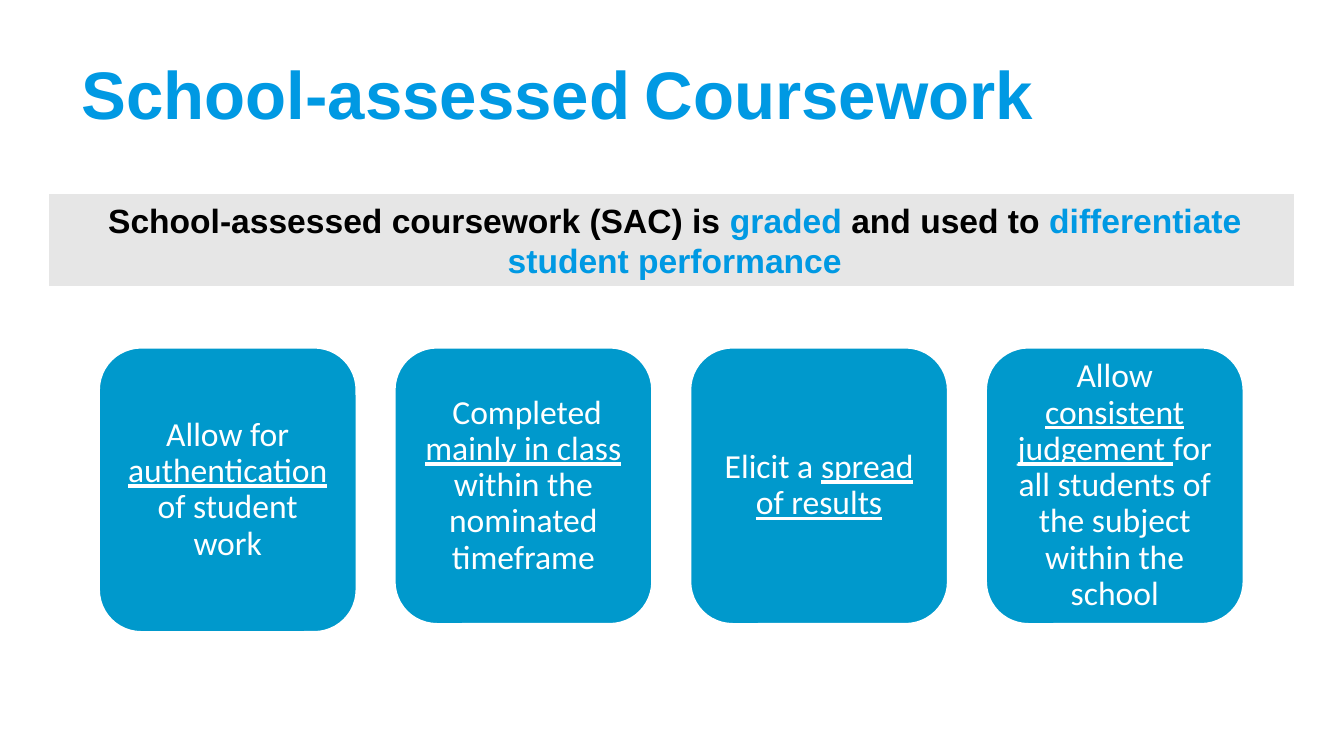
import pptx
import pptx.dml.color
import pptx.enum.shapes
import pptx.enum.text
import pptx.util
from pptx.util import Inches

COLORS = {
    "accent": "0099E3",
    "card": "0099CC",
    "banner": "E6E6E6",
    "white": "FFFFFF",
    "black": "000000",
}

# Each card: height and text runs with their own format
CARDS = [
    (2.13, [("Allow for ", {}), ("authentication", {"underline": True}),
            (" of student work", {})]),
    (2.07, [(" ", {"bold": True}), ("Completed ", {}),
            ("mainly in class ", {"underline": True}),
            ("within the nominated timeframe", {})]),
    (2.07, [("Elicit a ", {}), ("spread of results", {"underline": True})]),
    (2.07, [("Allow ", {}), ("consistent judgement ", {"underline": True}),
            ("for all students of the subject within the school", {})]),
]
CARD_LEFT, CARD_TOP, CARD_WIDTH, CARD_PITCH = 0.73, 2.58, 1.93, 2.2


def rgb(name):
    return pptx.dml.color.RGBColor.from_string(COLORS[name])


def write_text(shape, runs, font="Arial", size=18, color="black", bold=False,
               align="LEFT", line_spacing=1.0, margins=(0.1, 0.05, 0.1, 0.05)):
    """Fill a shape with one paragraph; a run may override the format."""
    frame = shape.text_frame
    frame.word_wrap = True
    frame.vertical_anchor = pptx.enum.text.MSO_ANCHOR.MIDDLE
    (frame.margin_left, frame.margin_top,
     frame.margin_right, frame.margin_bottom) = map(Inches, margins)
    paragraph = frame.paragraphs[0]
    paragraph.alignment = pptx.enum.text.PP_ALIGN[align]
    paragraph.line_spacing = line_spacing
    for text, override in runs:
        run = paragraph.add_run()
        run.text = text
        run.font.name = font
        run.font.size = pptx.util.Pt(override.get("size", size))
        run.font.bold = override.get("bold", bold)
        run.font.underline = override.get("underline", False)
        run.font.color.rgb = rgb(override.get("color", color))


def add_box(slide, kind, left, top, width, height, fill):
    """Add a filled shape with a white outline."""
    shape = slide.shapes.add_shape(
        pptx.enum.shapes.MSO_SHAPE[kind],
        Inches(left), Inches(top), Inches(width), Inches(height))
    shape.shadow.inherit = False
    shape.fill.solid()
    shape.fill.fore_color.rgb = rgb(fill)
    shape.line.color.rgb = rgb("white")
    shape.line.width = pptx.util.Pt(2)
    return shape


def add_title(slide):
    title = slide.shapes.add_textbox(
        Inches(0.51), Inches(0.22), Inches(7.5), Inches(0.94))
    runs = [("School-assessed", {}), (" ", {"size": 27}), ("Coursework", {})]
    write_text(title, runs, size=36, color="accent", bold=True)


def add_banner(slide):
    banner = add_box(slide, "RECTANGLE", 0.35, 1.43, 9.29, 0.71, "banner")
    runs = [
        ("School-assessed coursework (SAC) is ", {}),
        ("graded", {"color": "accent"}),
        (" and used to ", {}),
        ("differentiate student performance", {"color": "accent"}),
    ]
    write_text(banner, runs, bold=True, align="CENTER",
               margins=(0.15, 0.05, 0.1, 0.05))


def add_cards(slide):
    for index, (height, runs) in enumerate(CARDS):
        left = CARD_LEFT + index * CARD_PITCH
        card = add_box(slide, "ROUNDED_RECTANGLE", left, CARD_TOP,
                       CARD_WIDTH, height, "card")
        write_text(card, runs, font="Calibri", color="white", align="CENTER",
                   line_spacing=0.9, margins=(0.07,) * 4)


def main():
    presentation = pptx.Presentation()
    # Widescreen, 16:9
    presentation.slide_width = Inches(10)
    presentation.slide_height = Inches(10 * 9 / 16)
    slide = presentation.slides.add_slide(presentation.slide_layouts[6])

    # Heading, row of cards, then the banner
    add_title(slide)
    add_cards(slide)
    add_banner(slide)

    presentation.save("out.pptx")


if __name__ == "__main__":
    main()
